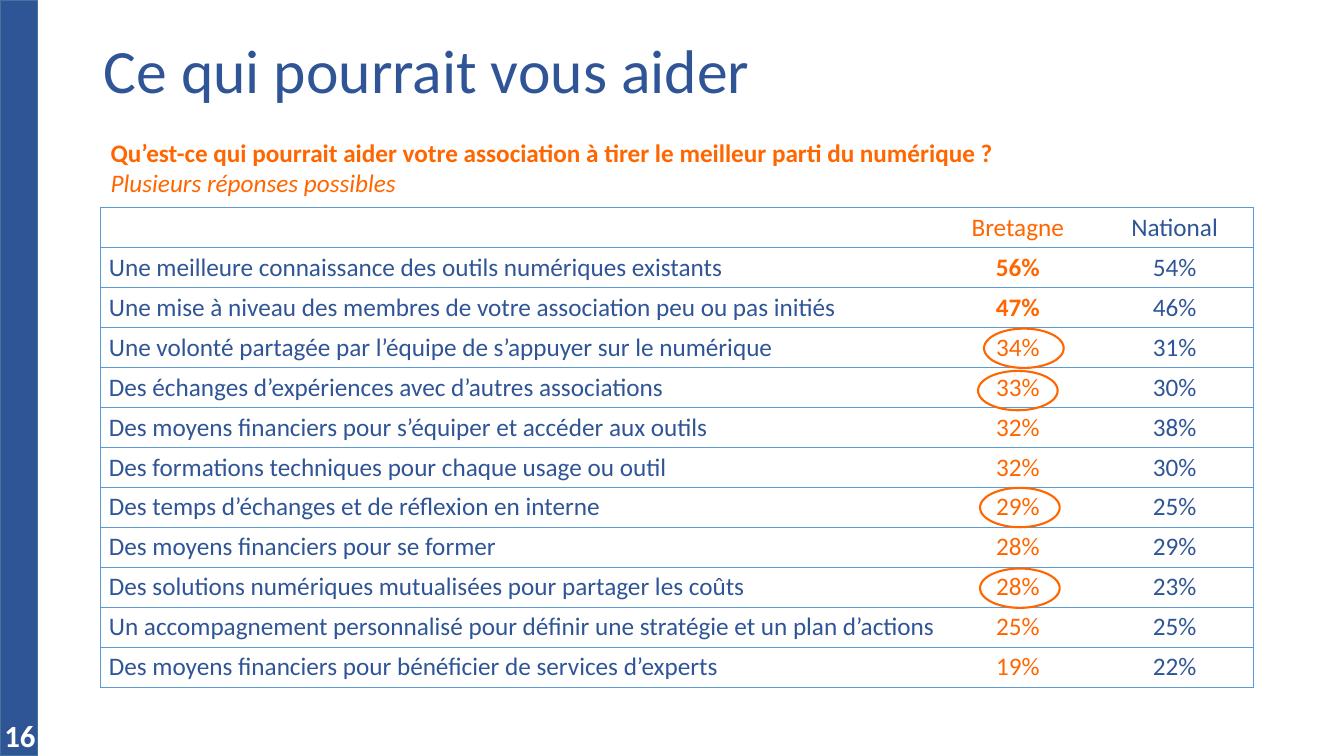
from dataclasses import dataclass

from lxml import etree
from pptx import Presentation
from pptx.dml.color import RGBColor
from pptx.enum.shapes import MSO_SHAPE
from pptx.enum.text import MSO_ANCHOR, PP_ALIGN
from pptx.oxml.ns import qn
from pptx.util import Emu, Pt

RECT, OVAL = MSO_SHAPE.RECTANGLE, MSO_SHAPE.OVAL
MIDDLE = MSO_ANCHOR.MIDDLE
LEFT, CENTER, RIGHT = PP_ALIGN.LEFT, PP_ALIGN.CENTER, PP_ALIGN.RIGHT
PX = 9144


@dataclass(frozen=True)
class Theme:
    """Colours, font and type sizes of the slide."""
    font: str = "Calibri"
    navy: str = "2F5597"
    edge: str = "43739E"
    rule: str = "5B9BD5"
    accent: str = "FF6600"
    white: str = "FFFFFF"
    title: int = 44
    number: int = 22
    body: int = 18


THEME = Theme()
WIDTHS = (832, 155, 156)
ROWS = (
    ("", "Bretagne", "National"),
    ("Une meilleure connaissance des outils numériques existants", "56%", "54%"),
    ("Une mise à niveau des membres de votre association peu ou pas initiés", "47%", "46%"),
    ("Une volonté partagée par l’équipe de s’appuyer sur le numérique", "34%", "31%"),
    ("Des échanges d’expériences avec d’autres associations", "33%", "30%"),
    ("Des moyens financiers pour s’équiper et accéder aux outils", "32%", "38%"),
    ("Des formations techniques pour chaque usage ou outil", "32%", "30%"),
    ("Des temps d’échanges et de réflexion en interne", "29%", "25%"),
    ("Des moyens financiers pour se former", "28%", "29%"),
    ("Des solutions numériques mutualisées pour partager les coûts", "28%", "23%"),
    ("Un accompagnement personnalisé pour définir une stratégie et un plan d’actions", "25%", "25%"),
    ("Des moyens financiers pour bénéficier de services d’experts", "19%", "22%"),
)
STRONG = (1, 2)
RINGS = ((976, 326), (970, 368), (972, 484), (972, 564))


def scale(*sizes):
    """Turn px lengths into EMU."""
    return [Emu(size * PX) for size in sizes]


def tint(code):
    """Return the colour for a hex code."""
    return RGBColor.from_string(code)


def style(run, size, color, bold=False, italic=False):
    """Format one run."""
    font = run.font
    font.name, font.size = THEME.font, Pt(size)
    font.bold, font.italic = bold, italic
    font.color.rgb = tint(color)


def write(frame, text, size, color, align=LEFT, bold=False):
    """Fill a text frame and format its runs."""
    frame.text = text
    for para in frame.paragraphs:
        para.alignment = align
        for run in para.runs:
            style(run, size, color, bold)


def shape(slide, kind, box, line, width, fill=None):
    """Add a preset shape with an outline and an optional fill."""
    item = slide.shapes.add_shape(kind, *scale(*box))
    item.shadow.inherit = False
    if fill:
        item.fill.solid()
        item.fill.fore_color.rgb = tint(fill)
    else:
        item.fill.background()
    item.line.color.rgb = tint(line)
    item.line.width = Pt(width)


def label(slide, box, text, size, color, align=LEFT, bold=False):
    """Add a wrapped text box and return its frame."""
    frame = slide.shapes.add_textbox(*scale(*box)).text_frame
    frame.word_wrap = True
    write(frame, text, size, color, align, bold)
    return frame


def head(slide, box, text):
    """Place and fill the title."""
    title = slide.shapes.title
    title.left, title.top, title.width, title.height = scale(*box)
    frame = title.text_frame
    frame.vertical_anchor = MIDDLE
    write(frame, text, THEME.title, THEME.navy)
    frame.paragraphs[0].line_spacing = 0.9


def border(cell, sides):
    """Draw the named cell sides and clear the others."""
    props = cell._tc.get_or_add_tcPr()
    for spot, side in enumerate("LRTB"):
        line = etree.Element(qn(f"a:ln{side}"), w=str(Pt(1)))
        if side in sides:
            fill = etree.SubElement(line, qn("a:solidFill"))
            etree.SubElement(fill, qn("a:srgbClr"), val=THEME.rule)
        else:
            etree.SubElement(line, qn("a:noFill"))
        props.insert(spot, line)


def grid(slide, left, top, height):
    """Add the table of answers."""
    box = scale(left, top, sum(WIDTHS), height)
    table = slide.shapes.add_table(len(ROWS), len(WIDTHS), *box).table
    table.first_row = table.horz_banding = False
    for col, width in zip(table.columns, scale(*WIDTHS)):
        col.width = width
    colors = THEME.navy, THEME.accent, THEME.navy
    sides = "LTB", "TB", "RTB"
    for row, values in enumerate(ROWS):
        for col, value in enumerate(values):
            cell = table.cell(row, col)
            cell.margin_top = cell.margin_bottom = cell.margin_right = 0
            cell.margin_left = 0 if col else scale(8)[0]
            cell.vertical_anchor = MIDDLE
            cell.fill.solid()
            cell.fill.fore_color.rgb = tint(THEME.white)
            write(cell.text_frame, value, THEME.body, colors[col],
                  CENTER if col else LEFT, col == 1 and row in STRONG)
            border(cell, sides[col])


def main():
    """Build and save the slide."""
    deck = Presentation()
    deck.slide_width, deck.slide_height = scale(1333, 750)
    slide = deck.slides.add_slide(deck.slide_layouts[5])
    shape(slide, RECT, (0, 0, 37, 750), THEME.edge, 1, THEME.navy)
    head(slide, (93, 0, 1150, 145), "Ce qui pourrait vous aider")
    page = label(slide, (-43, 709, 88, 41), "16", THEME.number, THEME.white, RIGHT, True)
    page.vertical_anchor = MIDDLE
    grid(slide, 100, 206, 476)
    ask = label(slide, (100, 131, 1143, 71),
                "Qu’est-ce qui pourrait aider votre association à tirer le meilleur parti "
                "du numérique ?\vPlusieurs réponses possibles",
                THEME.body, THEME.accent, bold=True)
    style(ask.paragraphs[0].runs[-1], THEME.body, THEME.accent, italic=True)
    for left, top in RINGS:
        shape(slide, OVAL, (left, top, 79, 39), THEME.accent, 1.5)
    deck.save("out.pptx")


if __name__ == "__main__":
    main()
